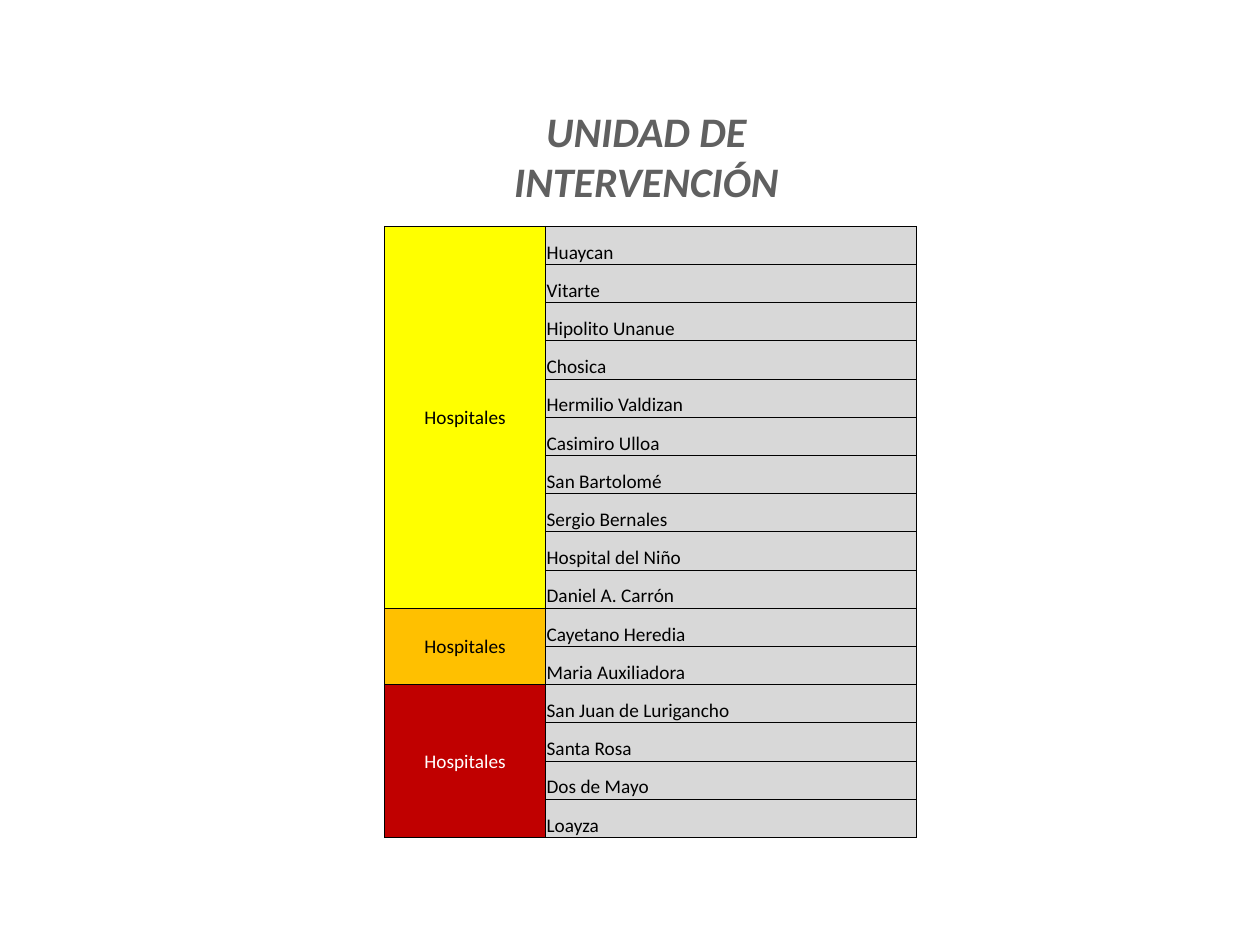
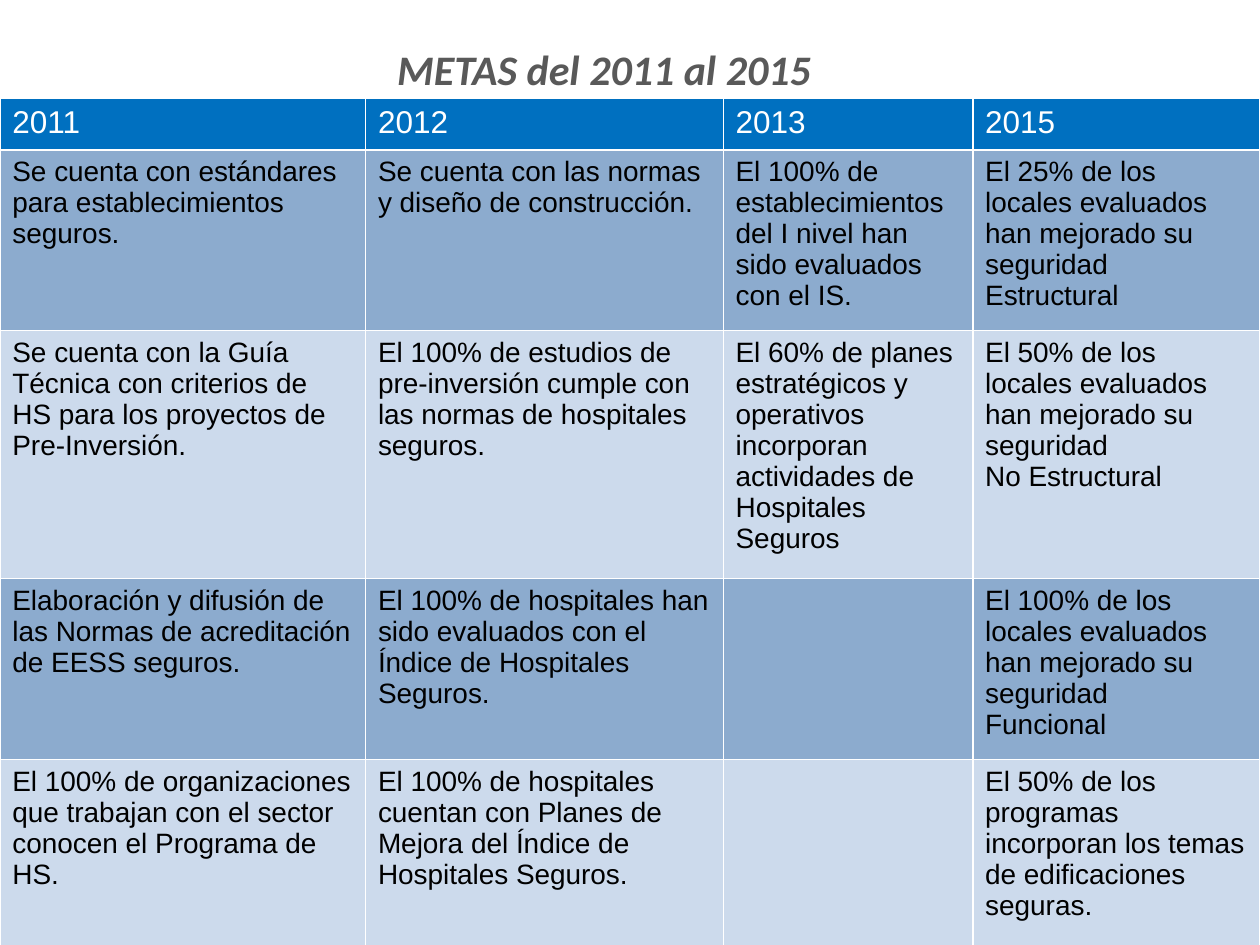
from dataclasses import dataclass

from lxml import etree
from pptx import Presentation
from pptx.dml.color import RGBColor
from pptx.enum.text import MSO_ANCHOR, PP_ALIGN
from pptx.oxml.ns import qn
from pptx.util import Cm, Pt

LEFT = PP_ALIGN.LEFT
CENTER = PP_ALIGN.CENTER
TOP = MSO_ANCHOR.TOP
MIDDLE = MSO_ANCHOR.MIDDLE
BOTTOM = MSO_ANCHOR.BOTTOM

BLACK = "000000"
WHITE = "FFFFFF"
HOSPITAL_GREY = "D8D8D8"
HEADER_BLUE = "0070C0"
BAND_BLUES = ("8CABCE", "CCDAEC")


@dataclass(frozen=True)
class Box:
    left: float
    top: float
    width: float
    height: float


@dataclass(frozen=True)
class CellStyle:
    fill: str
    font: str
    size: float
    border: str
    border_width: float
    color: str = BLACK
    align: PP_ALIGN = LEFT
    anchor: MSO_ANCHOR = TOP
    margins: tuple[float, float, float, float] = (0.25, 0.13, 0.25, 0.13)


@dataclass(frozen=True)
class HospitalGroup:
    fill: str
    color: str
    hospitals: tuple[str, ...]


GROUPS = (
    HospitalGroup("FFFF00", BLACK, (
        "Huaycan", "Vitarte", "Hipolito Unanue", "Chosica", "Hermilio Valdizan",
        "Casimiro Ulloa", "San Bartolomé", "Sergio Bernales", "Hospital del Niño",
        "Daniel A. Carrón")),
    HospitalGroup("FFC000", BLACK, ("Cayetano Heredia", "Maria Auxiliadora")),
    HospitalGroup("C00000", WHITE, (
        "San Juan de Lurigancho", "Santa Rosa", "Dos de Mayo", "Loayza")),
)

YEARS = ("2011", "2012", "2013", "2015")
GOALS = (
    ("Se cuenta con estándares para establecimientos seguros.",
     "Se cuenta con las normas y diseño de construcción.",
     "El 100% de establecimientos del I nivel han sido evaluados con el IS.",
     "El 25% de los locales evaluados han mejorado su seguridad\nEstructural"),
    ("Se cuenta con la Guía Técnica con criterios de HS para los proyectos de Pre-Inversión.",
     "El 100% de estudios de pre-inversión cumple con las normas de hospitales seguros.",
     "El 60% de planes estratégicos y operativos incorporan actividades de Hospitales Seguros",
     "El 50% de los locales evaluados han mejorado su seguridad\nNo Estructural"),
    ("Elaboración y difusión de las Normas de acreditación de EESS seguros.",
     "El 100% de hospitales han sido evaluados con el Índice de Hospitales Seguros.",
     "",
     "El 100% de los locales evaluados han mejorado su seguridad\nFuncional"),
    ("El 100% de organizaciones que trabajan con el sector conocen el Programa de HS.",
     "El 100% de hospitales cuentan con Planes de Mejora del Índice de Hospitales Seguros.",
     "",
     "El 50% de los programas incorporan los temas de edificaciones seguras."),
)


def rgb(value: str) -> RGBColor:
    return RGBColor.from_string(value)


def format_text(frame, font: str, size: float, color: str, align: PP_ALIGN,
                emphasis: bool = False) -> None:
    for paragraph in frame.paragraphs:
        paragraph.alignment = align
        for run in paragraph.runs:
            run.font.name = font
            run.font.size = Pt(size)
            run.font.color.rgb = rgb(color)
            run.font.bold = emphasis
            run.font.italic = emphasis


def add_title(slide, text: str, box: Box, color: str) -> None:
    title = slide.shapes.add_textbox(
        Cm(box.left), Cm(box.top), Cm(box.width), Cm(box.height))
    frame = title.text_frame
    frame.word_wrap = True
    frame.vertical_anchor = MIDDLE
    frame.text = text
    format_text(frame, "Calibri", 24, color, CENTER, emphasis=True)


def add_grid(slide, left: float, top: float, widths: tuple[float, ...],
             heights: tuple[float, ...]):
    table = slide.shapes.add_table(
        len(heights), len(widths), Cm(left), Cm(top),
        Cm(sum(widths)), Cm(sum(heights))).table
    table.first_row = False
    table.horz_banding = False
    for column, width in zip(table.columns, widths):
        column.width = Cm(width)
    for row, height in zip(table.rows, heights):
        row.height = Cm(height)
    return table


def set_borders(cell, color: str, width: float) -> None:
    properties = cell._tc.get_or_add_tcPr()
    for position, side in enumerate(("a:lnL", "a:lnR", "a:lnT", "a:lnB")):
        line = etree.Element(qn(side), w=str(Pt(width)))
        fill = etree.SubElement(line, qn("a:solidFill"))
        etree.SubElement(fill, qn("a:srgbClr"), val=color)
        properties.insert(position, line)


def fill_cell(cell, text: str, style: CellStyle) -> None:
    cell.text_frame.text = text
    format_text(cell.text_frame, style.font, style.size, style.color, style.align)
    cell.vertical_anchor = style.anchor
    left, top, right, bottom = style.margins
    cell.margin_left, cell.margin_top = Cm(left), Cm(top)
    cell.margin_right, cell.margin_bottom = Cm(right), Cm(bottom)
    cell.fill.solid()
    cell.fill.fore_color.rgb = rgb(style.fill)
    set_borders(cell, style.border, style.border_width)


def hospital_style(fill: str, color: str, align: PP_ALIGN, anchor: MSO_ANCHOR) -> CellStyle:
    return CellStyle(fill, "Calibri", 11, BLACK, 0.5, color, align, anchor,
                     (0.02, 0.02, 0.02, 0))


def goal_style(fill: str, size: float, color: str) -> CellStyle:
    return CellStyle(fill, "Arial", size, WHITE, 1, color)


def build_intervention_slide(slide) -> None:
    hospital_count = sum(len(group.hospitals) for group in GROUPS)
    table = add_grid(slide, 7.75, 4.56, (3.25, 7.47), (0.77,) * hospital_count)
    name_style = hospital_style(HOSPITAL_GREY, BLACK, LEFT, BOTTOM)
    first = 0
    for group in GROUPS:
        group_style = hospital_style(group.fill, group.color, CENTER, MIDDLE)
        for offset, hospital in enumerate(group.hospitals):
            row = first + offset
            fill_cell(table.cell(row, 0), "" if offset else "Hospitales", group_style)
            fill_cell(table.cell(row, 1), hospital, name_style)
        table.cell(first, 0).merge(table.cell(row, 0))
        first = row + 1
    add_title(slide, "UNIDAD DE INTERVENCIÓN", Box(8.56, 1.98, 8.94, 2.31), "606060")


def build_goals_slide(slide) -> None:
    add_title(slide, "METAS del 2011 al 2015", Box(0, 0, 24.36, 2.77), "595959")
    table = add_grid(slide, 0, 1.98, (7.37, 7.21, 5.03, 5.79),
                     (1.04, 3.61, 4.95, 3.63, 3.84))
    header = goal_style(HEADER_BLUE, 18, WHITE)
    bands = [goal_style(fill, 16, BLACK) for fill in BAND_BLUES]
    for row, texts in enumerate((YEARS, *GOALS)):
        style = bands[(row - 1) % len(bands)] if row else header
        for column, text in enumerate(texts):
            fill_cell(table.cell(row, column), text, style)


def main() -> None:
    deck = Presentation()
    deck.slide_width, deck.slide_height = Cm(25.4), Cm(19.05)
    blank = deck.slide_layouts[6]
    for build in (build_intervention_slide, build_goals_slide):
        build(deck.slides.add_slide(blank))
    deck.save("out.pptx")


if __name__ == "__main__":
    main()
